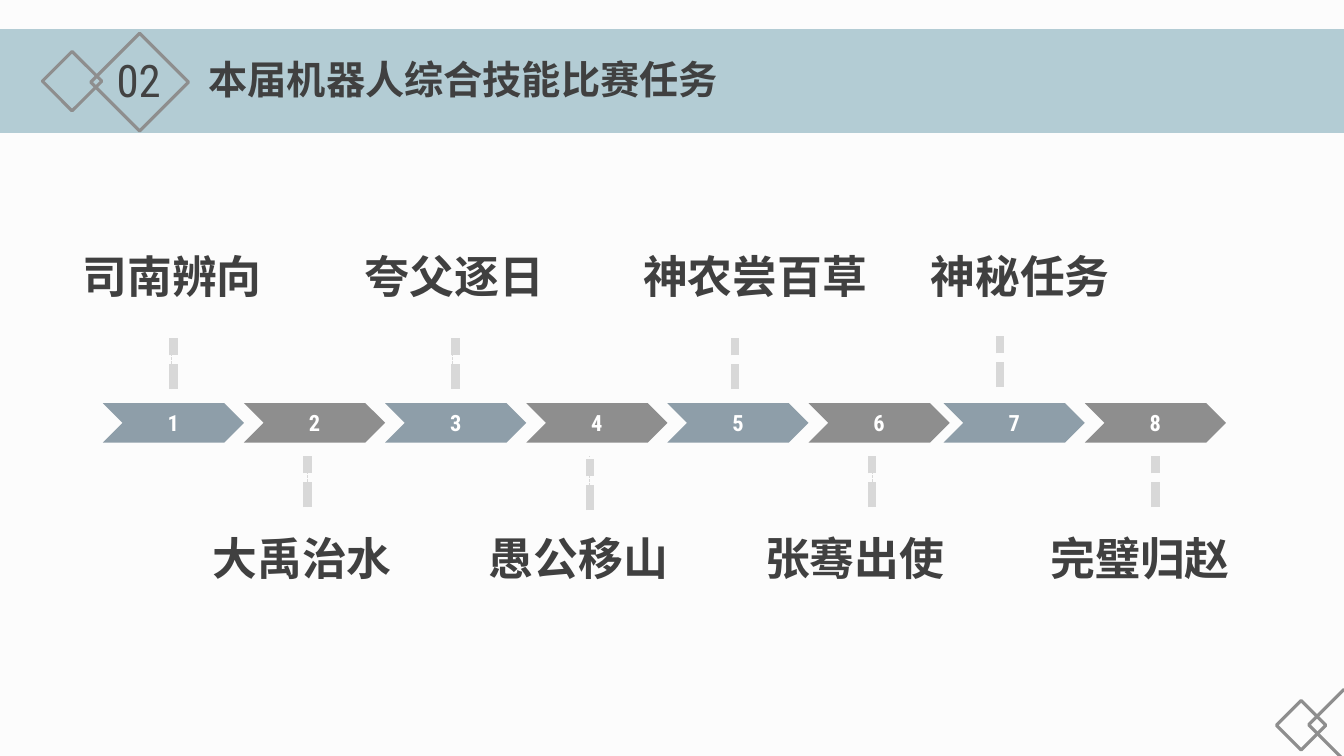
import pptx
import pptx.util
import pptx.dml.color
import pptx.enum.shapes
import pptx.enum.text
import pptx.enum.dml
import pptx.oxml.ns
import lxml.etree

Inches = pptx.util.Inches
RGBColor = pptx.dml.color.RGBColor
Shape = pptx.enum.shapes.MSO_SHAPE
Align = pptx.enum.text.PP_ALIGN
Anchor = pptx.enum.text.MSO_ANCHOR

PAPER = RGBColor(0xFC, 0xFC, 0xFC)
BAND = RGBColor(0xB3, 0xCC, 0xD4)
INK = RGBColor(0x40, 0x40, 0x40)
NUMBER_INK = RGBColor(0x42, 0x42, 0x42)
GRAY = RGBColor(0x8E, 0x8E, 0x8E)
SLATE = RGBColor(0x8E, 0x9E, 0xA9)
DASH = RGBColor(0xD8, 0xD8, 0xD8)
WHITE = RGBColor(0xFF, 0xFF, 0xFF)

TITLE = "本届机器人综合技能比赛任务"
SECTION = "02"
# name, label left, label width, dash centre, dash shift, thin dash centre
TASKS = [
    ("司南辨向", 0.72, 2.33, 1.72, 0, 1.7),
    ("大禹治水", 2.01, 2.33, 3.05, 0, 3.05),
    ("夸父逐日", 3.52, 2.33, 4.52, 0, 4.49),
    ("愚公移山", 4.75, 2.33, 5.85, 0.03, 5.85),
    ("神农尝百草", 6.28, 3.19, 7.29, 0, None),
    ("张骞出使", 7.49, 2.33, 8.65, 0, 8.65),
    ("神秘任务", 9.13, 2.33, 9.92, -0.02, None),
    ("完璧归赵", 10.32, 2.33, 11.46, 0, None),
]
DIAMONDS = [(0.42, 0.51, 0.59), (0.9, 0.33, 0.97), (12.98, 6.84, 0.7), (12.66, 6.95, 0.49)]

WIDTH, HEIGHT = 13.33, 7.5
ARROW_LEFT, ARROW_TOP, ARROW_WIDTH, ARROW_HEIGHT = 1.02, 4, 1.4, 0.39
LAST_PAIR_SHIFT = -0.06
LABEL_TOPS = (2.42, 5.22)
DASH_BOTTOMS = (3.86, 5.03)
DASH_LENGTH = 0.51

HEADING = {"name": "TeX Gyre Adventor", "size": pptx.util.Pt(28), "bold": True}
LABEL = {"name": "TeX Gyre Adventor", "size": pptx.util.Pt(32), "bold": True}
NUMBER = {"name": "Roboto Condensed", "size": pptx.util.Pt(32), "bold": False}
STEP = {"name": "Roboto Condensed", "size": pptx.util.Pt(16), "bold": True}


def write(box, text, look, color, align=Align.LEFT, anchor=Anchor.TOP, wrap=True):
    frame = box.text_frame
    frame.word_wrap = wrap
    frame.vertical_anchor = anchor
    para = frame.paragraphs[0]
    para.alignment = align
    span = para.add_run()
    span.text = text
    for key, value in look.items():
        setattr(span.font, key, value)
    span.font.color.rgb = color


def add_label(page, place, text, look, color, align=Align.LEFT):
    box = page.shapes.add_textbox(*map(Inches, place))
    write(box, text, look, color, align)
    box.text_frame.auto_size = pptx.enum.text.MSO_AUTO_SIZE.SHAPE_TO_FIT_TEXT


def add_solid(page, kind, place, color):
    shape = page.shapes.add_shape(kind, *map(Inches, place))
    shape.shadow.inherit = False
    shape.fill.solid()
    shape.fill.fore_color.rgb = color
    shape.line.fill.background()
    return shape


def add_diamond(page, left, top, size):
    shape = page.shapes.add_shape(Shape.DIAMOND, *map(Inches, (left, top, size, size)))
    shape.shadow.inherit = False
    shape.fill.background()
    shape.line.color.rgb = GRAY
    shape.line.width = pptx.util.Pt(2.25)


def add_dash(page, x, bottom, weight):
    ends = (x, bottom, x, bottom - DASH_LENGTH)
    dash = page.shapes.add_connector(
        pptx.enum.shapes.MSO_CONNECTOR.STRAIGHT, *map(Inches, ends))
    dash.line.color.rgb = DASH
    dash.line.width = pptx.util.Pt(weight)
    dash.line.dash_style = pptx.enum.dml.MSO_LINE.SQUARE_DOT
    lxml.etree.SubElement(dash.element.spPr, pptx.oxml.ns.qn("a:effectLst"))


def add_task(page, index, task):
    name, left, width, dash_x, shift, thin_x = task
    side = index % 2
    arrow_left = ARROW_LEFT + index * ARROW_WIDTH + (LAST_PAIR_SHIFT if index > 5 else 0)
    arrow = add_solid(page, Shape.CHEVRON,
                      (arrow_left, ARROW_TOP, ARROW_WIDTH, ARROW_HEIGHT), (SLATE, GRAY)[side])
    write(arrow, str(index + 1), STEP, WHITE, Align.CENTER, Anchor.MIDDLE, False)
    if thin_x is not None:
        add_dash(page, thin_x, DASH_BOTTOMS[side], 0.75)
    add_dash(page, dash_x, DASH_BOTTOMS[side] + shift, 6)
    add_label(page, (left, LABEL_TOPS[side], width, 0.64), name, LABEL, INK)


def main():
    deck = pptx.Presentation()
    deck.slide_width, deck.slide_height = Inches(WIDTH), Inches(HEIGHT)
    page = deck.slides.add_slide(deck.slide_layouts[5])
    page.background.fill.solid()
    page.background.fill.fore_color.rgb = PAPER

    add_solid(page, Shape.RECTANGLE, (0, 0.29, WIDTH, 1.03), BAND)
    title = page.shapes.title
    page.shapes.element.append(title.element)
    place = {"left": 1.97, "top": 0.5, "width": 6.05, "height": 0.57}
    for key, value in place.items():
        setattr(title, key, Inches(value))
    write(title, TITLE, HEADING, INK)
    title.text_frame.auto_size = pptx.enum.text.MSO_AUTO_SIZE.NONE

    for diamond in DIAMONDS:
        add_diamond(page, *diamond)
    add_label(page, (0.98, 0.47, 0.79, 0.64), SECTION, NUMBER, NUMBER_INK, Align.CENTER)
    for index, task in enumerate(TASKS):
        add_task(page, index, task)
    deck.save("out.pptx")


if __name__ == "__main__":
    main()
